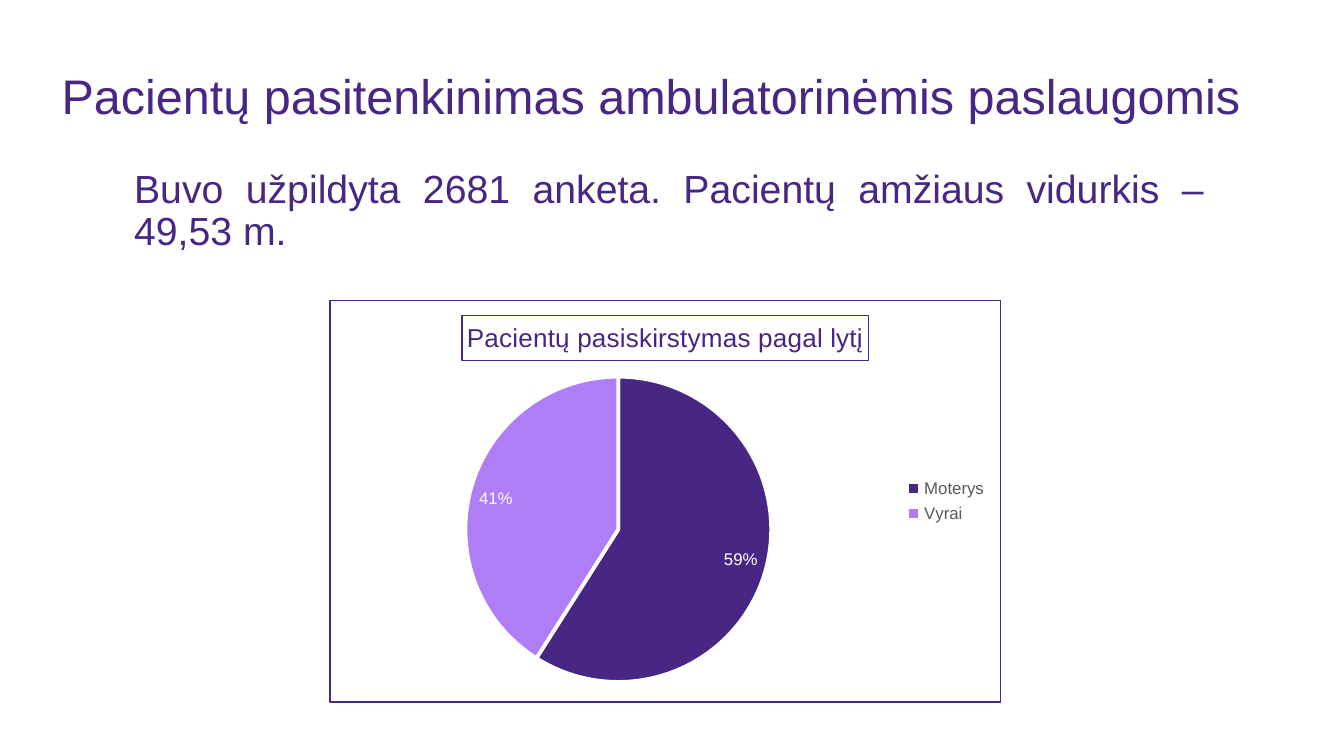
"""Build the slide on outpatient satisfaction, with a pie of patients by sex."""
from lxml import etree
from pptx import Presentation
from pptx.chart.data import CategoryChartData
from pptx.dml.color import RGBColor
from pptx.enum.chart import XL_CHART_TYPE, XL_LABEL_POSITION, XL_LEGEND_POSITION
from pptx.enum.text import MSO_ANCHOR, PP_ALIGN
from pptx.oxml import parse_xml
from pptx.util import Inches, Pt

PIE = XL_CHART_TYPE.PIE
END = XL_LABEL_POSITION.INSIDE_END
RIGHT = XL_LEGEND_POSITION.RIGHT
MID, TOP = MSO_ANCHOR.MIDDLE, MSO_ANCHOR.TOP
LEFT, JUST = PP_ALIGN.LEFT, PP_ALIGN.JUSTIFY
DARK, LIGHT, GREY, WHITE = "482683", "AF7DF6", "595959", "FFFFFF"
NS = ('xmlns:c="http://schemas.openxmlformats.org/drawingml/2006/chart" '
      'xmlns:a="http://schemas.openxmlformats.org/drawingml/2006/main"')


def tint(hue):
    return RGBColor.from_string(hue)


def style(font, size, hue):
    for key, val in {"name": "Arial", "size": Pt(size), "bold": False}.items():
        setattr(font, key, val)
    font.color.rgb = tint(hue)


deck = Presentation()
deck.slide_width = Inches(10)
deck.slide_height = deck.slide_width * 9 // 16
slide = deck.slides.add_slide(deck.slide_layouts[6])

texts = [
    ("Pacientų pasitenkinimas ambulatorinėmis paslaugomis",
     (0.36, 0.19, 9.18, 1.09), 26, MID, {"alignment": LEFT}),
    ("Buvo užpildyta 2681 anketa. Pacientų amžiaus vidurkis – 49,53 m.",
     (0.9, 1.21, 8.16, 0.79), 21, TOP,
     {"alignment": JUST, "space_before": Pt(6)}),
]
for words, place, size, anchor, form in texts:
    frame = slide.shapes.add_textbox(*map(Inches, place)).text_frame
    frame.word_wrap = True
    frame.vertical_anchor = anchor
    para = frame.paragraphs[0]
    for key, val in {"line_spacing": 0.9, **form}.items():
        setattr(para, key, val)
    run = para.add_run()
    run.text = words
    style(run.font, size, DARK)

data = CategoryChartData()
data.categories = ["Moterys", "Vyrai"]
data.add_series("Series 1", (59, 41))
box = map(Inches, (2.45, 2.23, 5, 3))
chart = slide.shapes.add_chart(PIE, *box, data).chart
style(chart.font, 10, "000000")

chart.has_title = True
title = chart.chart_title
run = title.text_frame.paragraphs[0].add_run()
run.text = "Pacientų pasiskirstymas pagal lytį"
style(run.font, 14, DARK)
title.format.line.color.rgb = tint(DARK)
title.format.line.width = Pt(0.75)

chart.has_legend = True
legend = chart.legend
legend.position = RIGHT
legend.include_in_layout = False
style(legend.font, 9, GREY)

plot = chart.plots[0]
plot.vary_by_categories = True
row = plot.series[0]
for spot, hue in enumerate((DARK, LIGHT)):
    form = row.points[spot].format
    form.fill.solid()
    form.fill.fore_color.rgb = tint(hue)
    form.line.color.rgb = tint(WHITE)
    form.line.width = Pt(2)

tags = row.data_labels
for key, val in {"show_percentage": True, "show_value": False,
                 "number_format": "0%", "number_format_is_linked": False,
                 "position": END}.items():
    setattr(tags, key, val)
style(tags.font, 9, WHITE)

root = chart.element
root.find("{*}txPr").addprevious(parse_xml(
    f'<c:spPr {NS}><a:solidFill><a:srgbClr val="{WHITE}"/></a:solidFill>'
    f'<a:ln w="{Pt(0.75)}"><a:solidFill><a:srgbClr val="{DARK}"/>'
    '</a:solidFill></a:ln></c:spPr>'))

area = root.find(".//{*}plotArea")
old = area.find("{*}layout")
if old is not None:
    area.remove(old)
lay = parse_xml(f"<c:layout {NS}><c:manualLayout/></c:layout>")
space = etree.QName(lay).namespace
for key, val in {"layoutTarget": "inner", "xMode": "edge", "yMode": "edge",
                 "x": 0.2, "y": 0.19, "w": 0.46, "h": 0.76}.items():
    etree.SubElement(lay[0], f"{{{space}}}{key}").set("val", str(val))
area.insert(0, lay)

deck.save("out.pptx")
